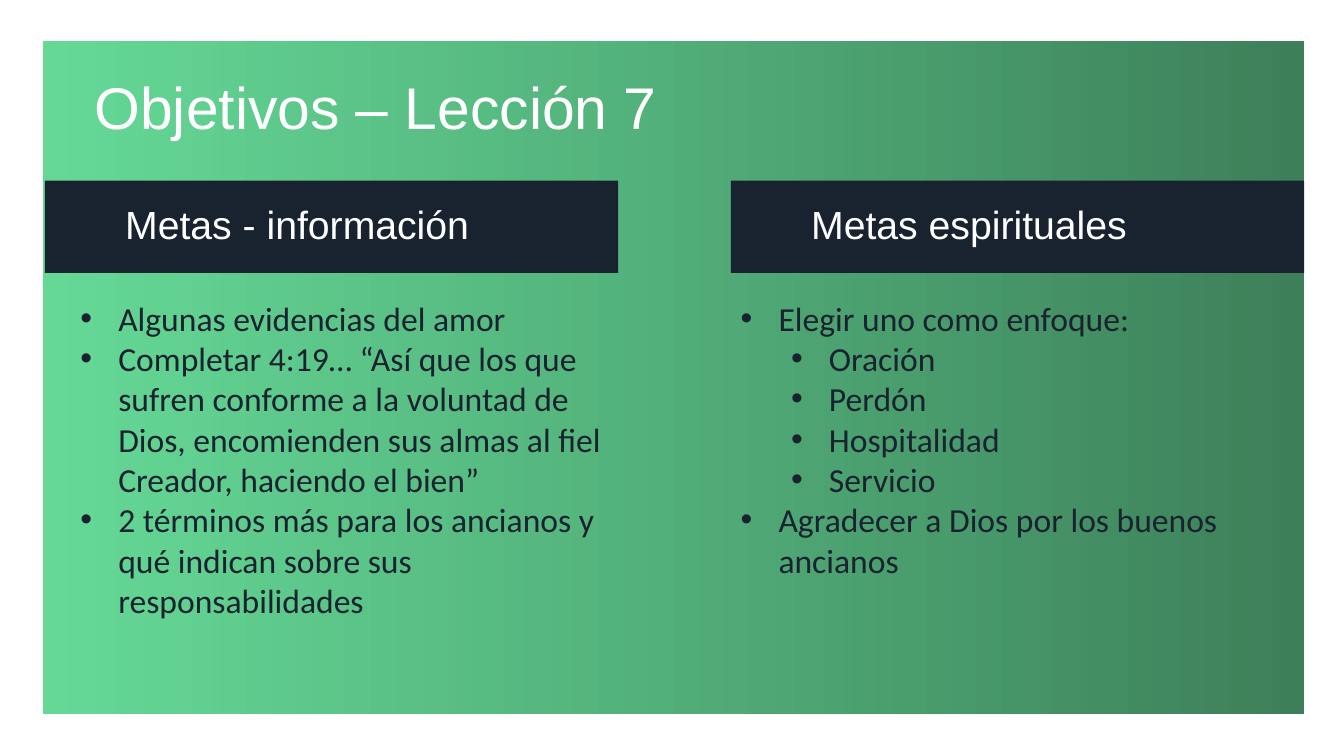
from pptx import Presentation
from pptx.dml.color import RGBColor
from pptx.enum.shapes import MSO_SHAPE as Shape
from pptx.enum.text import MSO_ANCHOR as Anchor
from pptx.oxml.ns import qn
from pptx.util import Pt
from lxml.etree import SubElement as Sub

WHITE, NAVY = "FFFFFF", "19232F"


def color(code):
    return RGBColor.from_string(code)


def write(shape, items, font, size, tint, left, hang=0, anchor=Anchor.TOP, **form):
    """Fill a shape with (level, text) paragraphs; a hang above zero adds bullets."""
    frame = shape.text_frame
    frame.word_wrap, frame.vertical_anchor = True, anchor
    for i, (level, text) in enumerate(items):
        para = frame.paragraphs[0] if i == 0 else frame.add_paragraph()
        para.level = level
        props = para._p.get_or_add_pPr()
        props.set("marL", str(Pt(left + 36 * level)))
        props.set("indent", str(Pt(-hang)))
        props.set("algn", "l")
        if hang:
            Sub(props, qn("a:buFont"), typeface="Arial")
            Sub(props, qn("a:buChar"), char="•")
        for name, value in form.items():
            setattr(para, name, value)
        run = para.add_run()
        run.text = text
        run.font.name, run.font.size = font, Pt(size)
        run.font.color.rgb = color(tint)


deck = Presentation()
deck.slide_width, deck.slide_height = Pt(960), Pt(540)
slide = deck.slides.add_slide(deck.slide_layouts[6])
shapes = slide.shapes

# Green panel fading from left to right
panel = shapes.add_shape(Shape.RECTANGLE, Pt(31), Pt(30), Pt(900), Pt(480))
panel.shadow.inherit = False
panel.line.fill.background()
panel.fill.gradient()
panel.fill.gradient_angle = 0
for stop, code in zip(panel.fill.gradient_stops, ["2CCB70", "166638"]):
    stop.color.rgb = color(code)
for node, alpha in zip(panel._element.spPr.iter(qn("a:srgbClr")), [73, 83]):
    Sub(node, qn("a:alpha"), val=str(alpha * 1000))

title = shapes.add_textbox(Pt(42.5), Pt(56), Pt(764.5), Pt(46))
write(title, [(0, "Objetivos – Lección 7")], "Arial", 42, WHITE, 18,
      anchor=Anchor.MIDDLE, line_spacing=0.9)

# Two columns: heading left, list left, heading, list
columns = [
    (32, 50.4, "Metas - información", [
        (0, "Algunas evidencias del amor"),
        (0, "Completar 4:19… “Así que los que sufren conforme a la voluntad de Dios, "
            "encomienden sus almas al fiel Creador, haciendo el bien”"),
        (0, "2 términos más para los ancianos y qué indican sobre sus "
            "responsabilidades"),
    ]),
    (522, 522, "Metas espirituales", [
        (0, "Elegir uno como enfoque:"),
        (1, "Oración"),
        (1, "Perdón"),
        (1, "Hospitalidad"),
        (1, "Servicio"),
        (0, "Agradecer a Dios por los buenos ancianos"),
    ]),
]
for bar_x, list_x, head, goals in columns:
    bar = shapes.add_shape(Shape.RECTANGLE, Pt(bar_x), Pt(129), Pt(409.6), Pt(66))
    bar.shadow.inherit = False
    bar.fill.solid()
    bar.fill.fore_color.rgb = color(NAVY)
    bar.line.fill.background()
    write(bar, [(0, head)], "Arial", 28, WHITE, 50.4,
          anchor=Anchor.MIDDLE, line_spacing=0.9)
    body = shapes.add_textbox(Pt(list_x), Pt(209), Pt(387.4), Pt(262))
    write(body, goals, "Calibri", 24, NAVY, 27, hang=27)

deck.save("out.pptx")
